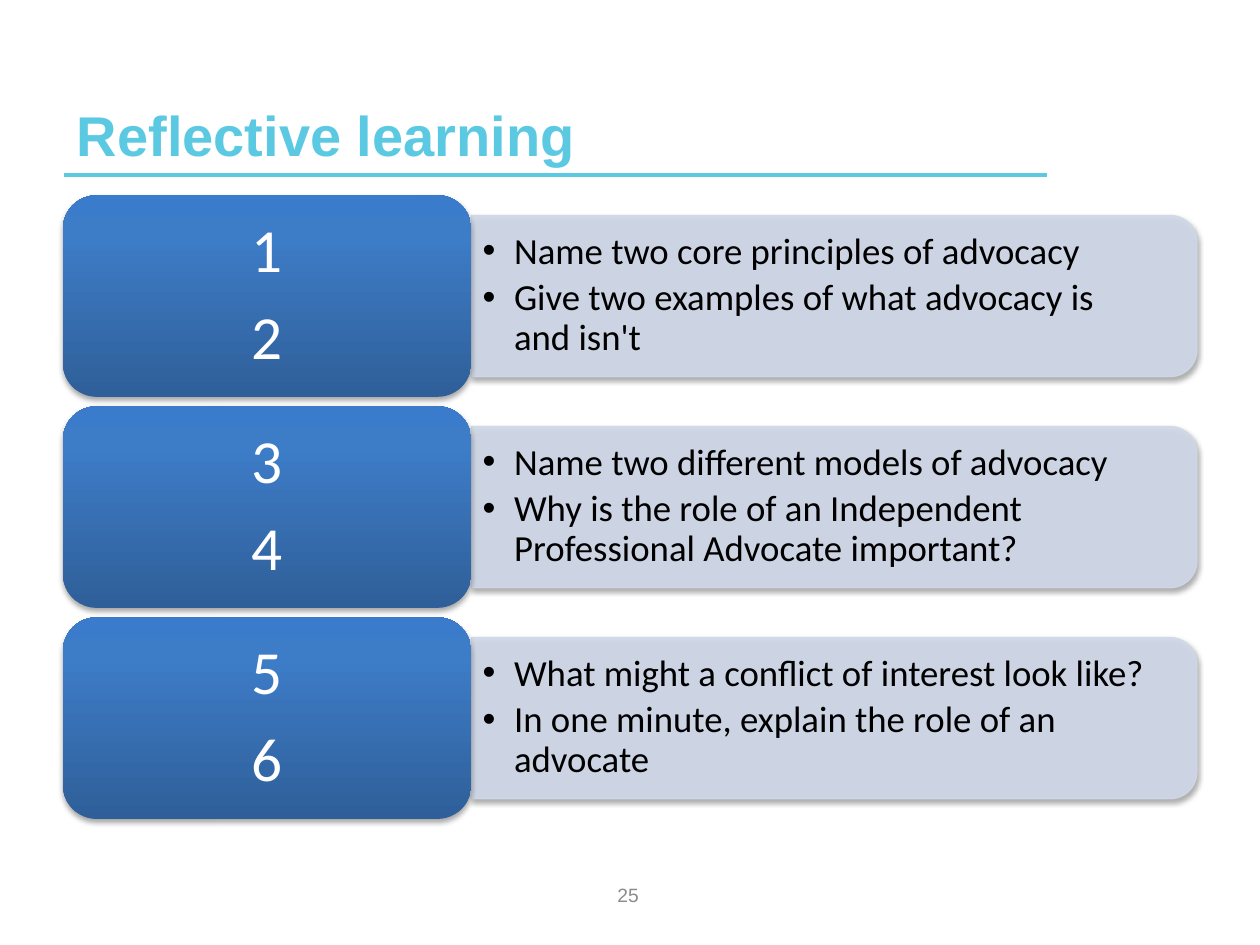
from dataclasses import dataclass

from lxml.etree import SubElement
from pptx import Presentation
from pptx.dml.color import RGBColor
from pptx.enum.shapes import MSO_CONNECTOR, MSO_SHAPE
from pptx.enum.text import MSO_ANCHOR, MSO_AUTO_SIZE, PP_ALIGN
from pptx.oxml import parse_xml
from pptx.oxml.ns import nsdecls, qn
from pptx.util import Inches, Pt


@dataclass(frozen=True)
class Theme:
    accent: str = "5CC9E3"
    panel: str = "D0D8E8"
    badge_stops: tuple = ((0, "2F5F99"), (80, "3D7CC7"), (100, "3A7CCB"))
    badge_text: str = "FFFFFF"
    body_text: str = "000000"
    page_text: str = "8C8C8C"
    shadow: str = "000000"
    heading_font: str = "Arial"
    body_font: str = "Calibri"
    title_size: int = 32
    badge_size: int = 35
    body_size: int = 21
    page_size: int = 11


THEME = Theme()

QUESTIONS = [
    (["1", "2"],
     ["Name two core principles of advocacy",
      "Give two examples of what advocacy is \nand isn't"]),
    (["3", "4"],
     ["Name two different models of advocacy",
      "Why is the role of an Independent Professional Advocate important?"]),
    (["5", "6"],
     ["What might a conflict of interest look like?",
      "In one minute, explain the role of an advocate"]),
]


def rgb(color):
    return RGBColor.from_string(color)


def add_runs(paragraph, text, font, size, color, bold=False):
    for index, line in enumerate(text.split("\n")):
        if index:
            paragraph.add_line_break()
        run = paragraph.add_run()
        run.text = line
        run.font.name = font
        run.font.size = Pt(size)
        run.font.bold = bold
        run.font.color.rgb = rgb(color)


def add_text_frame(slide, left, top, width, height, inset_x=0.1, inset_y=0.05):
    frame = slide.shapes.add_textbox(
        Inches(left), Inches(top), Inches(width), Inches(height)).text_frame
    frame.word_wrap = True
    frame.vertical_anchor = MSO_ANCHOR.MIDDLE
    frame.margin_left = frame.margin_right = Inches(inset_x)
    frame.margin_top = frame.margin_bottom = Inches(inset_y)
    return frame


def fill_paragraphs(frame, texts, size, color, space_after, align, bulleted=False):
    for index, text in enumerate(texts):
        paragraph = frame.add_paragraph() if index else frame.paragraphs[0]
        if bulleted:
            properties = paragraph._p.get_or_add_pPr()
            properties.set("marL", str(Inches(0.25)))
            properties.set("indent", str(Inches(-0.25)))
            SubElement(properties, qn("a:buFont"), typeface="Arial")
            SubElement(properties, qn("a:buChar"), char="•")
        paragraph.alignment = align
        paragraph.line_spacing = 0.9
        paragraph.space_after = Pt(space_after)
        add_runs(paragraph, text, THEME.body_font, size, color)


def set_alpha(fill_parent, percent):
    color = fill_parent.find(f"{qn('a:solidFill')}/{qn('a:srgbClr')}")
    SubElement(color, qn("a:alpha"), val=str(percent * 1000))


def add_soft_shadow(shape):
    shape.shadow.inherit = False
    effects = shape._element.spPr.find(qn("a:effectLst"))
    effects.append(parse_xml(
        f'<a:outerShdw {nsdecls("a")} blurRad="{Pt(3.1)}" dist="{Pt(1.8)}" '
        f'dir="5400000" rotWithShape="0"><a:srgbClr val="{THEME.shadow}">'
        f'<a:alpha val="35000"/></a:srgbClr></a:outerShdw>'))


def add_heading(slide, text, left, top, width, height):
    title = slide.shapes.title
    title.left, title.top = Inches(left), Inches(top)
    title.width, title.height = Inches(width), Inches(height)
    frame = title.text_frame
    frame.auto_size = MSO_AUTO_SIZE.NONE
    frame.vertical_anchor = MSO_ANCHOR.BOTTOM
    frame.paragraphs[0].alignment = PP_ALIGN.LEFT
    add_runs(frame.paragraphs[0], text, THEME.heading_font, THEME.title_size,
             THEME.accent, bold=True)

    baseline = Inches(top + height + 0.01)
    rule = slide.shapes.add_connector(
        MSO_CONNECTOR.STRAIGHT, Inches(left), baseline, Inches(left + width), baseline)
    rule.line.color.rgb = rgb(THEME.accent)
    rule.line.width = Pt(2)
    SubElement(rule._element.spPr, qn("a:effectLst"))


def add_panel(slide, questions, left, top, width, height):
    panel = slide.shapes.add_shape(
        MSO_SHAPE.ROUND_2_SAME_RECTANGLE,
        Inches(left + (width - height) / 2), Inches(top + (height - width) / 2),
        Inches(height), Inches(width))
    panel.rotation = 90
    panel.fill.solid()
    panel.fill.fore_color.rgb = rgb(THEME.panel)
    panel.line.color.rgb = rgb(THEME.panel)
    panel.line.width = Pt(0.75)
    properties = panel._element.spPr
    set_alpha(properties, 90)
    set_alpha(properties.find(qn("a:ln")), 90)
    add_soft_shadow(panel)

    frame = add_text_frame(slide, left, top + 0.06, width - 0.06, height - 0.13,
                           0.09, 0.04)
    fill_paragraphs(frame, questions, THEME.body_size, THEME.body_text, 4,
                    PP_ALIGN.LEFT, bulleted=True)


def add_badge(slide, numbers, left, top, width, height):
    badge = slide.shapes.add_shape(
        MSO_SHAPE.ROUNDED_RECTANGLE,
        Inches(left), Inches(top), Inches(width), Inches(height))
    stops = "".join(
        f'<a:gs pos="{position * 1000}"><a:srgbClr val="{color}"/></a:gs>'
        for position, color in THEME.badge_stops)
    badge._element.spPr.find(qn("a:prstGeom")).addnext(parse_xml(
        f'<a:gradFill {nsdecls("a")} rotWithShape="1"><a:gsLst>{stops}</a:gsLst>'
        f'<a:lin ang="16200000" scaled="0"/></a:gradFill>'))
    badge.line.fill.background()
    add_soft_shadow(badge)

    pad = 0.08
    frame = add_text_frame(slide, left + pad, top + pad, width - 2 * pad,
                           height - 2 * pad, 0.15, 0.07)
    fill_paragraphs(frame, numbers, THEME.badge_size, THEME.badge_text, 12,
                    PP_ALIGN.CENTER)


def add_question_rows(slide, rows, left, top, width, height):
    gap = 0.075
    row_height = (height - gap * (len(rows) - 1)) / len(rows)
    badge_width = width * 0.36
    panel_height = row_height * 0.8
    for index, (numbers, questions) in enumerate(rows):
        row_top = top + index * (row_height + gap)
        add_panel(slide, questions, left + badge_width,
                  row_top + (row_height - panel_height) / 2,
                  width - badge_width, panel_height)
        add_badge(slide, numbers, left, row_top, badge_width, row_height)


def add_page_number(slide, number, left, top, width, height):
    paragraph = add_text_frame(slide, left, top, width, height).paragraphs[0]
    paragraph.alignment = PP_ALIGN.CENTER
    add_runs(paragraph, number, THEME.heading_font, THEME.page_size, THEME.page_text)


def main():
    deck = Presentation()
    deck.slide_width, deck.slide_height = Inches(10), Inches(7.5)
    slide = deck.slides.add_slide(deck.slide_layouts[5])
    add_heading(slide, "Reflective learning", 0.51, 0.29, 7.8, 1.09)
    add_question_rows(slide, QUESTIONS, 0.5, 1.55, 9, 4.95)
    add_page_number(slide, "25", 3.82, 6.9, 2.33, 0.4)
    deck.save("out.pptx")


if __name__ == "__main__":
    main()
